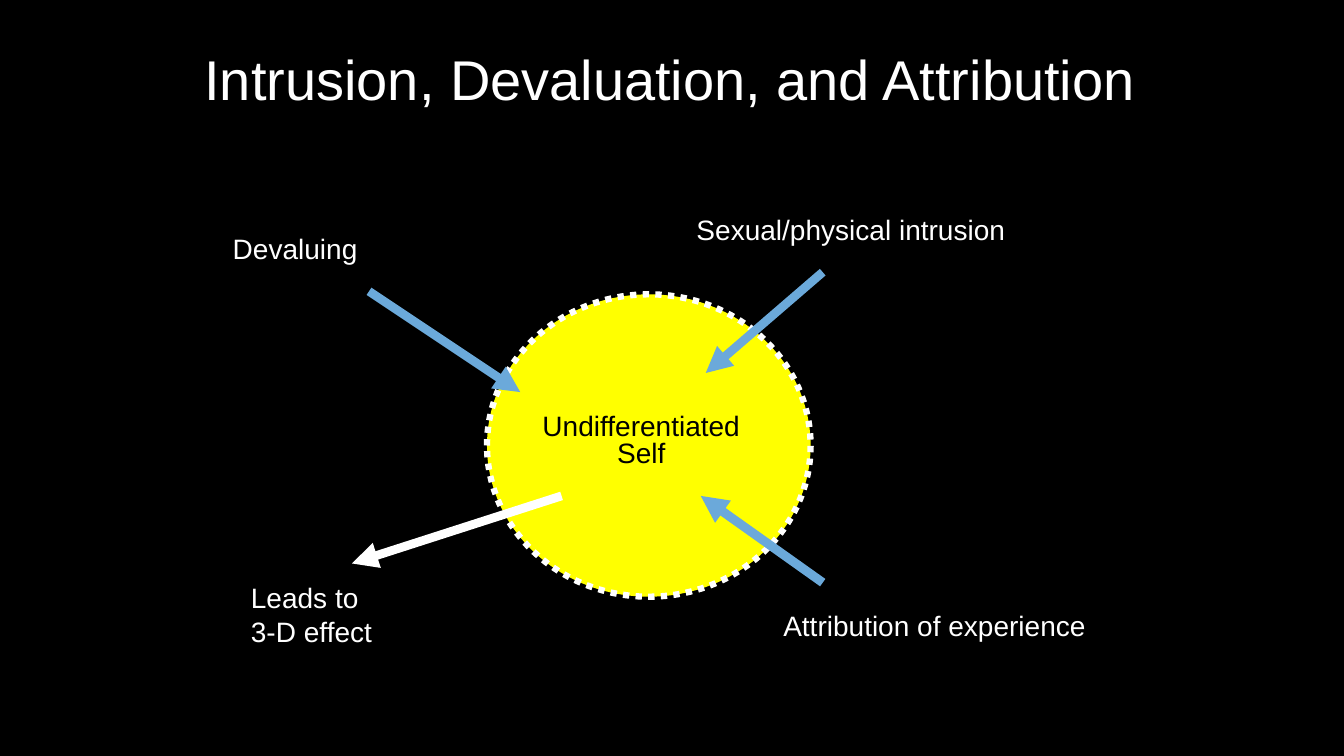
from dataclasses import dataclass

from lxml import etree
from pptx import Presentation
from pptx import util as u
from pptx.dml.color import RGBColor
from pptx.enum import dml, shapes, text
from pptx.oxml.ns import qn

COLORS = {"black": "000000", "white": "FFFFFF", "yellow": "FFFF00", "blue": "6BA9DA"}
FONT = "Arial"


@dataclass
class Label:
    lines: tuple[str, ...]
    box: tuple[float, float, float, float]
    color: str = "white"
    paragraph_format: dict | None = None


@dataclass
class Arrow:
    start: tuple[float, float]
    end: tuple[float, float]
    color: str = "blue"
    width: float = 6.25


SELF_SPACING = {
    "alignment": text.PP_ALIGN.CENTER,
    "line_spacing": 0.4,
    "space_before": u.Pt(10),
}
LABELS = [
    Label(("Undifferentiated", "Self"), (5.07, 4.17, 2.58, 0.54), "black", SELF_SPACING),
    Label(("Devaluing",), (2.21, 2.25, 2.42, 0.44)),
    Label(("Sexual/physical intrusion",), (6.81, 2.06, 4.5, 0.44)),
    Label(("Attribution of experience",), (7.67, 5.99, 4.38, 0.44)),
    Label(("Leads to", "3-D effect"), (2.39, 5.71, 1.75, 0.77)),
]
ARROWS = [
    Arrow((8.16, 5.78), (6.95, 4.92), width=6.5),
    Arrow((8.16, 2.7), (7, 3.7)),
    Arrow((3.66, 2.89), (5.16, 3.89)),
    Arrow((5.57, 4.92), (3.49, 5.59), "white"),
]


def rgb(name: str) -> RGBColor:
    return RGBColor.from_string(COLORS[name])


def inches(*values: float) -> list[u.Length]:
    return [u.Inches(value) for value in values]


def apply(target, formats: dict) -> None:
    for key, value in formats.items():
        setattr(target, key, value)


def write(paragraph, words: str, size: float, color: str, formats: dict) -> None:
    run = paragraph.add_run()
    run.text = words
    apply(run.font, {"name": FONT, "size": u.Pt(size)})
    run.font.color.rgb = rgb(color)
    apply(paragraph, formats)


def add_title(slide, words: str) -> None:
    title = slide.shapes.title
    left, top, width, height = inches(1.31, 0, 10.66, 1.63)
    apply(title, {"left": left, "top": top, "width": width, "height": height})
    apply(title.text_frame, {"vertical_anchor": text.MSO_ANCHOR.MIDDLE, "word_wrap": True})
    write(title.text_frame.paragraphs[0], words, 40, "white",
          {"alignment": text.PP_ALIGN.CENTER, "line_spacing": 0.9})


def add_self_circle(slide) -> None:
    circle = slide.shapes.add_shape(
        shapes.MSO_SHAPE.OVAL, *inches(4.83, 2.92, 3.21, 3))
    circle.shadow.inherit = False
    circle.fill.solid()
    circle.fill.fore_color.rgb = rgb("yellow")
    circle.line.color.rgb = rgb("white")
    apply(circle.line, {"width": u.Pt(4.5), "dash_style": dml.MSO_LINE.ROUND_DOT})


def add_label(slide, label: Label) -> None:
    frame = slide.shapes.add_textbox(*inches(*label.box)).text_frame
    apply(frame, {"word_wrap": True, "auto_size": text.MSO_AUTO_SIZE.SHAPE_TO_FIT_TEXT})
    for index, line in enumerate(label.lines):
        paragraph = frame.add_paragraph() if index else frame.paragraphs[0]
        write(paragraph, line, 20, label.color, label.paragraph_format or {})


def add_arrow(slide, arrow: Arrow) -> None:
    connector = slide.shapes.add_connector(
        shapes.MSO_CONNECTOR.STRAIGHT, *inches(*arrow.start, *arrow.end))
    connector.line.color.rgb = rgb(arrow.color)
    connector.line.width = u.Pt(arrow.width)
    # Arrowhead at the end, and no theme shadow
    properties = connector.line._get_or_add_ln()
    etree.SubElement(properties, qn("a:tailEnd"), type="triangle")
    etree.SubElement(connector._element.spPr, qn("a:effectLst"))


def main() -> None:
    deck = Presentation()
    apply(deck, {"slide_width": u.Inches(13.33), "slide_height": u.Inches(7.5)})
    slide = deck.slides.add_slide(deck.slide_layouts[5])
    slide.background.fill.solid()
    slide.background.fill.fore_color.rgb = rgb("black")

    add_title(slide, "Intrusion, Devaluation, and Attribution")
    add_self_circle(slide)
    # Influences on the self, then their captions
    for arrow in ARROWS:
        add_arrow(slide, arrow)
    for label in LABELS:
        add_label(slide, label)
    deck.save("out.pptx")


if __name__ == "__main__":
    main()
